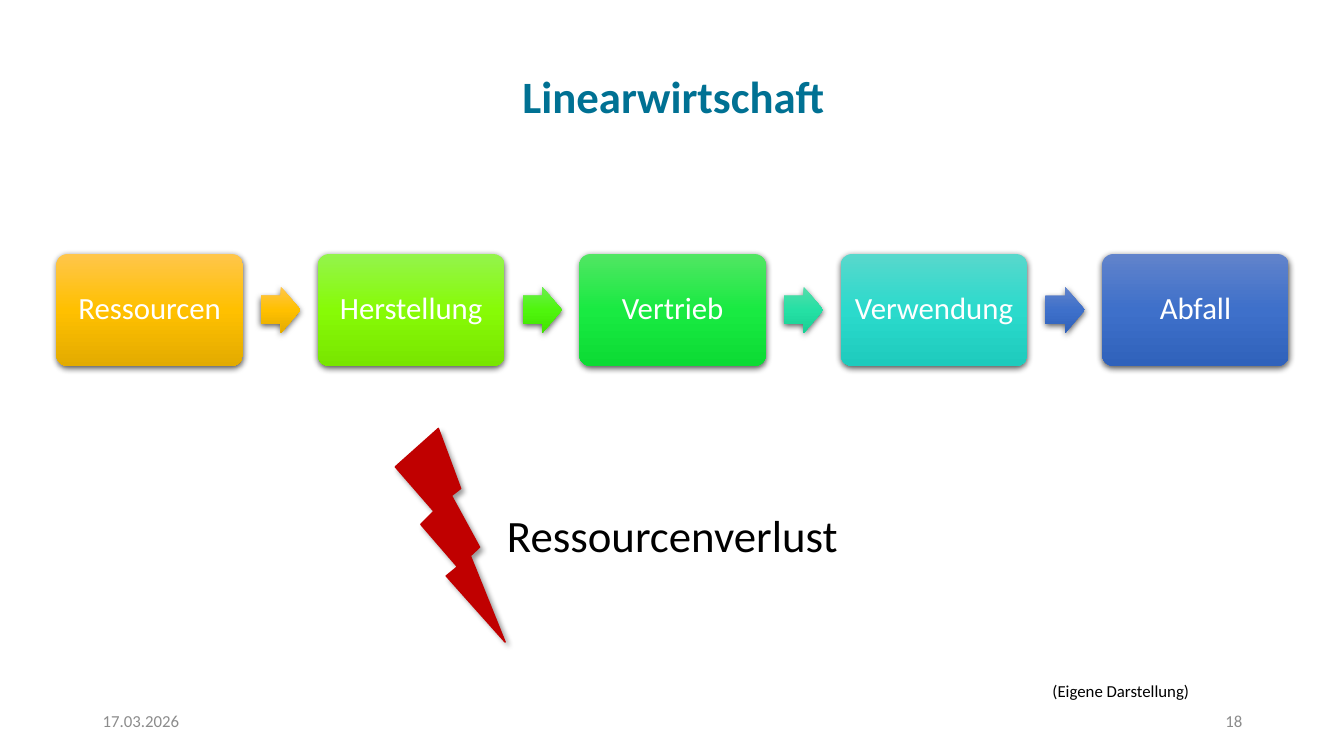
from dataclasses import dataclass

from pptx import Presentation
from pptx.dml.color import RGBColor
from pptx.enum.shapes import MSO_SHAPE
from pptx.enum.text import MSO_ANCHOR, PP_ALIGN
from pptx.oxml import parse_xml
from pptx.oxml.ns import nsdecls
from pptx.util import Inches, Pt


@dataclass(frozen=True)
class Theme:
    font: str = "Calibri"
    title: str = "007193"
    text: str = "000000"
    light: str = "FFFFFF"
    muted: str = "8C8C8C"
    bolt: str = "C00000"
    large: int = 32
    step: int = 22
    small: int = 12


THEME = Theme()
AMBER = ("FFC64B", "FFC000", "E3AB00")
LIME = ("94F44C", "87FB06", "78E500")
GRASS = ("6BEF4D", "4FF50D", "41E500")
GREEN = ("51E663", "19EA42", "0CDB34")
MINT = ("55DDAB", "25E0A4", "18D095")
TEAL = ("58D8CC", "2BDACC", "1ECBBD")
BLUE = ("6183CB", "3E70CA", "3062BB")

# Label, card shades, shades of the arrow that follows
STEPS = [
    ("Ressourcen", AMBER, AMBER),
    ("Herstellung", LIME, GRASS),
    ("Vertrieb", GREEN, MINT),
    ("Verwendung", TEAL, BLUE),
    ("Abfall", BLUE, None),
]
LEFT, TOP, PITCH = 0.56, 2.52, 2.593
CARD_W, CARD_H = 1.85, 1.11
ARROW_W, ARROW_H, ARROW_GAP = 0.39, 0.46, 0.18


def style(frame, size, color, align=PP_ALIGN.LEFT, bold=False):
    for para in frame.paragraphs:
        para.alignment = align
        for run in para.runs:
            font = run.font
            font.name = THEME.font
            font.size = Pt(size)
            font.bold = bold
            font.color.rgb = RGBColor.from_string(color)


def add_label(slide, text, box, size, color, align=PP_ALIGN.LEFT,
              bold=False, anchor=MSO_ANCHOR.TOP):
    frame = slide.shapes.add_textbox(*map(Inches, box)).text_frame
    frame.word_wrap = True
    frame.vertical_anchor = anchor
    frame.text = text
    style(frame, size, color, align, bold)


def add_shadow(shape, alpha, blur, dist, angle):
    """Cast a black shadow: alpha in percent, lengths in points, angle in degrees."""
    shape._element.spPr.append(parse_xml(
        f'<a:effectLst {nsdecls("a")}><a:outerShdw blurRad="{Pt(blur)}" '
        f'dist="{Pt(dist)}" dir="{angle * 60000}" algn="ctr" rotWithShape="0">'
        f'<a:srgbClr val="000000"><a:alpha val="{alpha * 1000}"/></a:srgbClr>'
        '</a:outerShdw></a:effectLst>'))


def add_block(slide, kind, box, shades, adjust):
    """Add a borderless shape shaded from top to bottom."""
    shape = slide.shapes.add_shape(kind, *map(Inches, box))
    for index, value in enumerate(adjust):
        shape.adjustments[index] = value
    stops = "".join(
        f'<a:gs pos="{index * 50000}"><a:srgbClr val="{shade}"/></a:gs>'
        for index, shade in enumerate(shades))
    shape._element.spPr.append(parse_xml(
        f'<a:gradFill {nsdecls("a")} rotWithShape="1"><a:gsLst>{stops}</a:gsLst>'
        '<a:lin ang="5400000" scaled="0"/></a:gradFill>'))
    shape.line.fill.background()
    add_shadow(shape, 63, 4.5, 1.5, 90)
    return shape


def add_card(slide, left, label, shades):
    box = (left, TOP, CARD_W, CARD_H)
    card = add_block(slide, MSO_SHAPE.ROUNDED_RECTANGLE, box, shades, [0.1])
    frame = card.text_frame
    frame.word_wrap = True
    frame.vertical_anchor = MSO_ANCHOR.MIDDLE
    frame.margin_left = frame.margin_right = Inches(0.09)
    frame.margin_top = frame.margin_bottom = Inches(0.09)
    frame.text = label
    frame.paragraphs[0].line_spacing = 0.9
    style(frame, THEME.step, THEME.light, PP_ALIGN.CENTER)


def add_arrow(slide, left, shades):
    box = (left, TOP + (CARD_H - ARROW_H) / 2, ARROW_W, ARROW_H)
    add_block(slide, MSO_SHAPE.RIGHT_ARROW, box, shades, [0.6, 0.5])


def add_chain(slide):
    for index, (label, shades, next_shades) in enumerate(STEPS):
        left = LEFT + index * PITCH
        add_card(slide, left, label, shades)
        if next_shades:
            add_arrow(slide, left + CARD_W + ARROW_GAP, next_shades)


def add_bolt(slide, box):
    bolt = slide.shapes.add_shape(MSO_SHAPE.LIGHTNING_BOLT, *map(Inches, box))
    color = RGBColor.from_string(THEME.bolt)
    bolt.fill.solid()
    bolt.fill.fore_color.rgb = color
    bolt.line.color.rgb = color
    bolt.line.width = Pt(1)
    add_shadow(bolt, 40, 4, 3, 45)


def main():
    deck = Presentation()
    deck.slide_width, deck.slide_height = Inches(13.33), Inches(7.5)
    slide = deck.slides.add_slide(deck.slide_layouts[6])
    add_chain(slide)
    add_bolt(slide, (3.92, 4.25, 1.09, 2.12))
    add_label(slide, "Ressourcenverlust", (4.61, 4.99, 4.12, 0.64),
              THEME.large, THEME.text, PP_ALIGN.CENTER)
    add_label(slide, "17.03.2026", (0.92, 6.95, 3, 0.4),
              THEME.small, THEME.muted, anchor=MSO_ANCHOR.MIDDLE)
    add_label(slide, "18", (9.42, 6.95, 3, 0.4), THEME.small, THEME.muted,
              PP_ALIGN.RIGHT, anchor=MSO_ANCHOR.MIDDLE)
    add_label(slide, "(Eigene Darstellung)", (10.34, 6.7, 1.75, 0.3),
              THEME.small, THEME.text)
    add_label(slide, "Linearwirtschaft", (5.04, 0.63, 3.28, 0.64),
              THEME.large, THEME.title, PP_ALIGN.CENTER, bold=True)
    deck.save("out.pptx")


if __name__ == "__main__":
    main()
